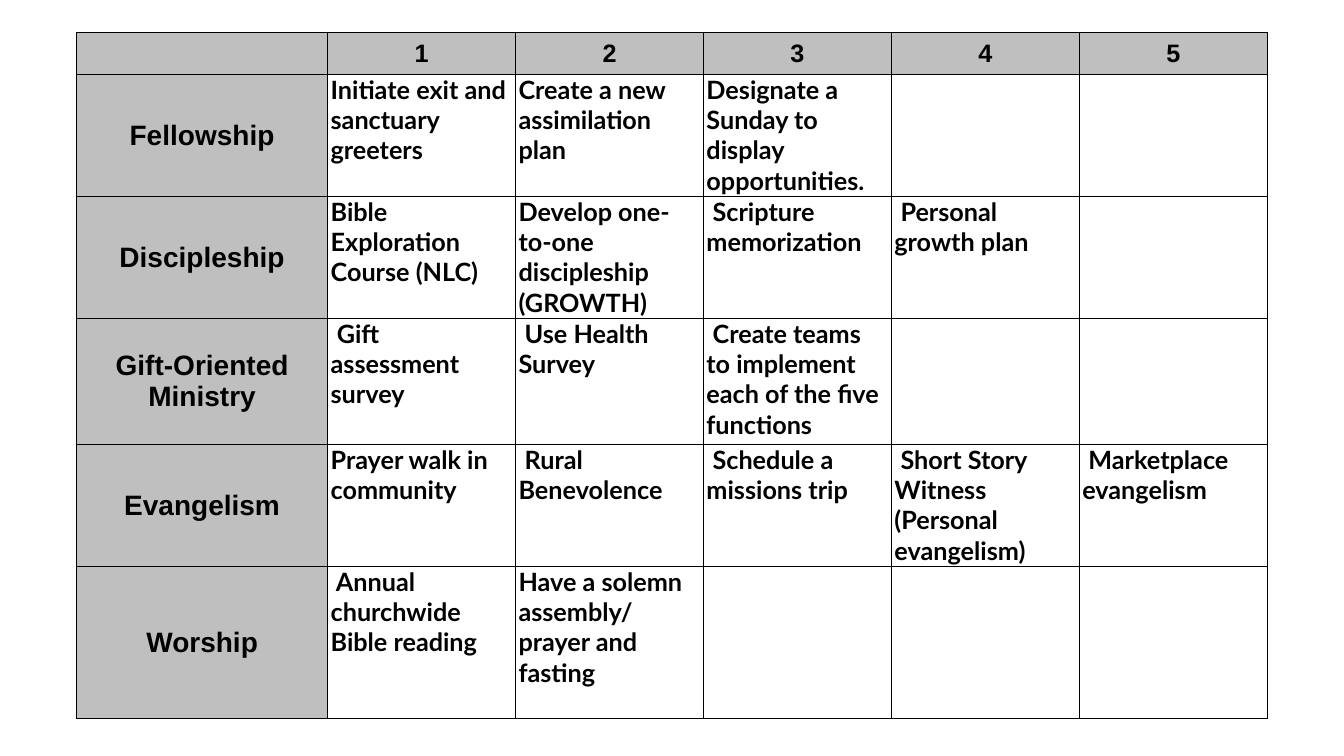
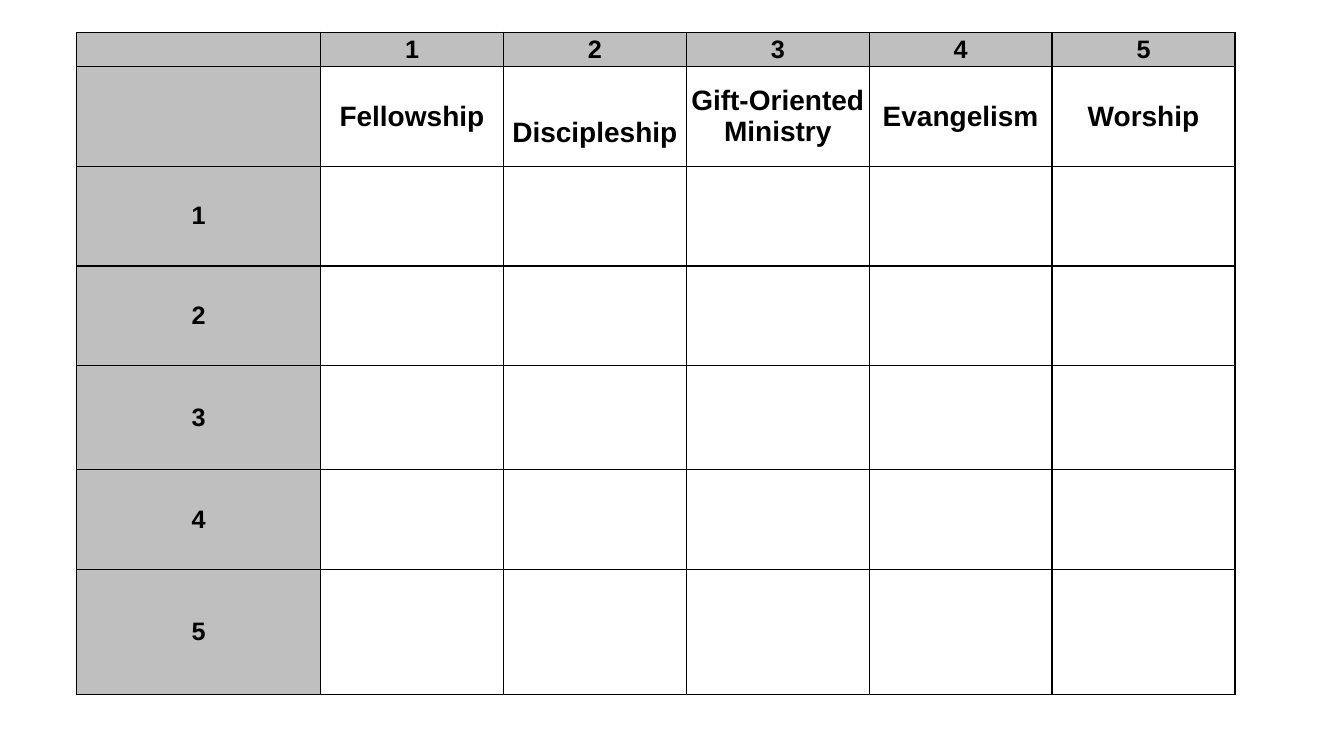
import pptx
import pptx.dml.color
import pptx.enum.text
import pptx.oxml
import pptx.oxml.ns
import pptx.util

SCALE = 9144
BLACK, GREY, WHITE = "000000", "BFBFBF", "FFFFFF"
HEADING_FONT, BODY_FONT = "Arial", "Lato"
NUMBER_SIZE, NAME_SIZE, BODY_SIZE = 18, 20, 18
LEFT, TOP = 76, 32
SIDE_INSET = 3
LINE_HEIGHT = 32
NUMBERS = ["1", "2", "3", "4", "5"]

PLAN = {
    "Fellowship": [
        "Initiate exit and sanctuary\ngreeters",
        "Create a new assimilation plan",
        "Designate a\nSunday to display\nopportunities.",
    ],
    "Discipleship": [
        "Bible Exploration Course (NLC)",
        "Develop one-to-one discipleship\n(GROWTH)",
        " Scripture\nmemorization",
        " Personal growth plan",
    ],
    "Gift-Oriented Ministry": [
        " Gift assessment survey",
        " Use Health Survey",
        " Create teams to implement each of the five functions",
    ],
    "Evangelism": [
        "Prayer walk in\ncommunity",
        " Rural Benevolence",
        " Schedule a missions trip",
        " Short Story Witness (Personal evangelism)",
        " Marketplace evangelism",
    ],
    "Worship": [
        " Annual churchwide\nBible reading",
        "Have a solemn assembly/ prayer and fasting",
    ],
}


def px(length):
    return pptx.util.Emu(round(length * SCALE))


def color(value):
    return pptx.dml.color.RGBColor.from_string(value)


def add_borders(cell):
    properties = cell._tc.get_or_add_tcPr()
    namespace = pptx.oxml.ns.nsdecls("a")
    for index, side in enumerate(("lnL", "lnR", "lnT", "lnB")):
        border = pptx.oxml.parse_xml(
            f'<a:{side} {namespace} w="12700"><a:solidFill>'
            f'<a:srgbClr val="{BLACK}"/></a:solidFill></a:{side}>'
        )
        properties.insert(index, border)


def style_cell(cell, fill):
    cell.fill.solid()
    cell.fill.fore_color.rgb = color(fill)
    cell.margin_left = cell.margin_right = px(SIDE_INSET)
    cell.margin_top = cell.margin_bottom = 0
    add_borders(cell)


def write_cell(cell, text, font, size, centered):
    cell.text = text
    if centered:
        cell.vertical_anchor = pptx.enum.text.MSO_ANCHOR.MIDDLE
    for para in cell.text_frame.paragraphs:
        if centered:
            para.alignment = pptx.enum.text.PP_ALIGN.CENTER
        para.font.name = font
        para.font.size = pptx.util.Pt(size)
        para.font.bold = True
        para.font.color.rgb = color(BLACK)


def add_grid(page, box, label_width, row_heights):
    left, top, width, height = map(px, box)
    columns = len(NUMBERS) + 1
    table = page.shapes.add_table(
        len(row_heights), columns, left, top, width, height
    ).table
    table.first_row = table.horz_banding = False
    item_width = (box[2] - label_width) / len(NUMBERS)
    for index, column in enumerate(table.columns):
        column.width = px(item_width if index else label_width)
    for row, row_height in zip(table.rows, row_heights):
        row.height = px(row_height)
    for row in range(len(row_heights)):
        for column in range(columns):
            fill = WHITE if row and column else GREY
            style_cell(table.cell(row, column), fill)
    for column, number in enumerate(NUMBERS, 1):
        write_cell(table.cell(0, column), number, HEADING_FONT, NUMBER_SIZE, True)
    return table


def add_plan_page(deck):
    page = deck.slides.add_slide(deck.slide_layouts[6])
    row_heights = [42, 121, 121, 125, 121, 151]
    table = add_grid(page, (LEFT, TOP, 1181, sum(row_heights)), 249, row_heights)
    for row, (name, actions) in enumerate(PLAN.items(), 1):
        write_cell(table.cell(row, 0), name, HEADING_FONT, NAME_SIZE, True)
        for column, action in enumerate(actions, 1):
            write_cell(table.cell(row, column), action, BODY_FONT, BODY_SIZE, False)


def add_worksheet_page(deck):
    page = deck.slides.add_slide(deck.slide_layouts[6])
    row_heights = [34, 99, 99, 99, 103, 99, 124]
    table = add_grid(page, (LEFT, TOP, 1149, sum(row_heights)), 242, row_heights)
    for column, name in enumerate(PLAN, 1):
        write_cell(table.cell(1, column), name, HEADING_FONT, NAME_SIZE, True)
    table.cell(1, 2).margin_top = px(LINE_HEIGHT)
    for row, number in enumerate(NUMBERS, 2):
        write_cell(table.cell(row, 0), number, HEADING_FONT, NUMBER_SIZE, True)


def main():
    deck = pptx.Presentation()
    deck.slide_width, deck.slide_height = px(1333), px(750)
    add_plan_page(deck)
    add_worksheet_page(deck)
    deck.save("out.pptx")


if __name__ == "__main__":
    main()
